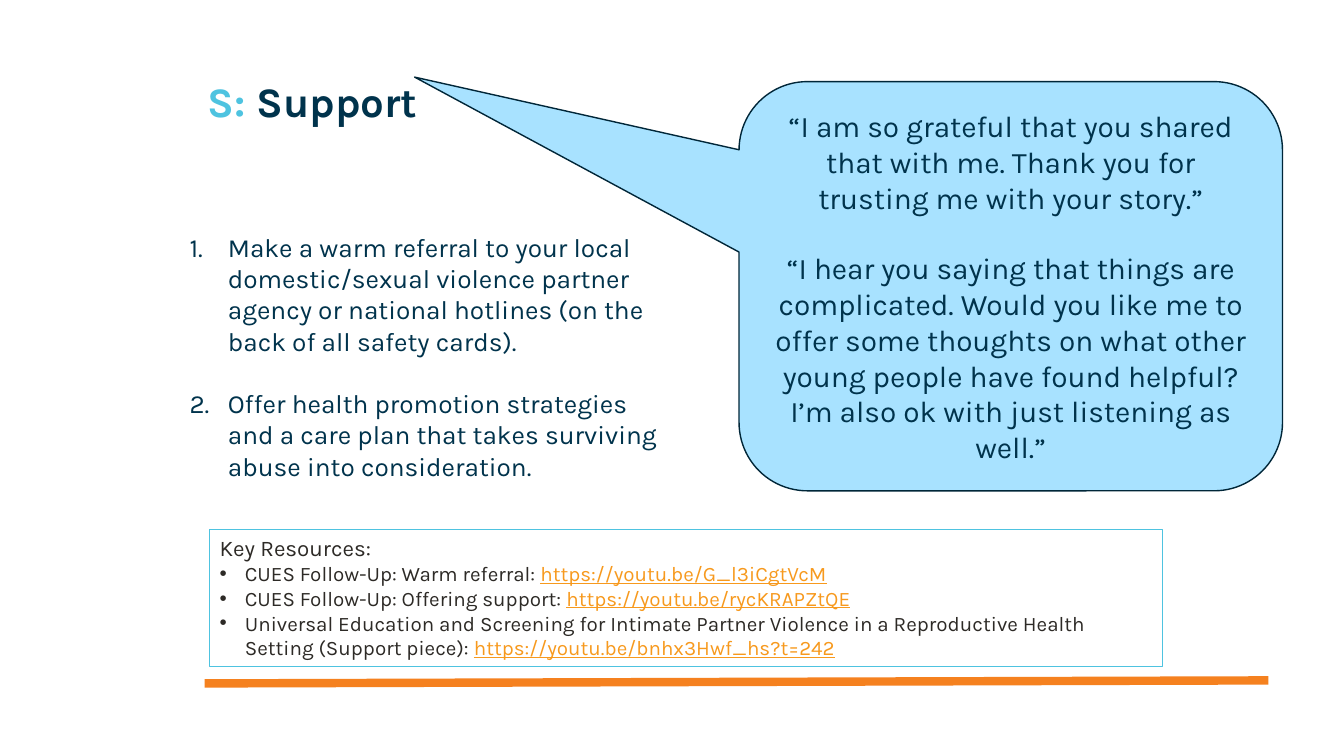
"""Build the Support slide with its steps, spoken examples and key resources."""
from dataclasses import dataclass

from lxml import etree
from pptx import Presentation
from pptx.dml.color import RGBColor
from pptx.enum.shapes import MSO_CONNECTOR, MSO_SHAPE
from pptx.enum.text import MSO_ANCHOR, MSO_AUTO_SIZE, PP_ALIGN
from pptx.oxml.ns import qn
from pptx.util import Inches, Pt

CALLOUT, RECT = MSO_SHAPE.ROUNDED_RECTANGULAR_CALLOUT, MSO_SHAPE.RECTANGLE
STRAIGHT = MSO_CONNECTOR.STRAIGHT
TOP, MIDDLE = MSO_ANCHOR.TOP, MSO_ANCHOR.MIDDLE
LEFT, CENTER = PP_ALIGN.LEFT, PP_ALIGN.CENTER
NO_FIT = MSO_AUTO_SIZE.NONE
FONT = "Karla"
NAVY, SKY, INK, LINK = "00334C", "4EC3E0", "2D2A26", "F7991D"


@dataclass
class Resource:
    label: str
    url: str


STEPS = [
    "Make a warm referral to your local domestic/sexual violence partner agency "
    "or national hotlines (on the back of all safety cards).",
    "Offer health promotion strategies and a care plan that takes surviving abuse "
    "into consideration.",
]
QUOTES = [
    "“I am so grateful that you shared that with me. Thank you for trusting me with "
    "your story.”",
    "“I hear you saying that things are complicated. Would you like me to offer some "
    "thoughts on what other young people have found helpful? I’m also ok with just "
    "listening as well.”",
]
RESOURCES = [
    Resource("CUES Follow-Up: Warm referral: ", "https://youtu.be/G_l3iCgtVcM"),
    Resource("CUES Follow-Up: Offering support: ", "https://youtu.be/rycKRAPZtQE"),
    Resource("Universal Education and Screening for Intimate Partner Violence in a "
             "Reproductive Health Setting (Support piece): ",
             "https://youtu.be/bnhx3Hwf_hs?t=242"),
]


def rgb(color: str) -> RGBColor:
    """Turn a hex string into a colour."""
    return RGBColor.from_string(color)


def place(sp, left: float, top: float, width: float, height: float) -> None:
    """Move and size a placeholder."""
    sp.left, sp.top = Inches(left), Inches(top)
    sp.width, sp.height = Inches(width), Inches(height)


def setup_frame(sp, anchor=TOP, inset: tuple[float, float] = (0.1, 0.05)):
    """Prepare a wrapping text frame and return it."""
    tf = sp.text_frame
    tf.word_wrap, tf.auto_size, tf.vertical_anchor = True, NO_FIT, anchor
    tf.margin_left = tf.margin_right = Inches(inset[0])
    tf.margin_top = tf.margin_bottom = Inches(inset[1])
    return tf


def add_paragraph(tf, first: bool, align=LEFT, before: float = 0, spacing: float = 1):
    """Return the first paragraph or a new one, with its spacing set."""
    p = tf.paragraphs[0] if first else tf.add_paragraph()
    p.alignment, p.line_spacing = align, spacing
    p.space_before = Pt(0 if first else before)
    return p


def set_bullet(p, tag: str, indent: float, **attrs: str) -> None:
    """Give a paragraph a hanging bullet or number."""
    pPr = p._p.get_or_add_pPr()
    pPr.set("marL", str(Inches(indent)))
    pPr.set("indent", str(-Inches(indent)))
    etree.SubElement(pPr, qn(tag), **attrs)


def add_run(p, text: str, size: float, color: str, bold: bool = False,
            underline: bool = False) -> None:
    """Add a formatted run."""
    r = p.add_run()
    r.text = text
    font = r.font
    font.name, font.size, font.bold = FONT, Pt(size), bold
    font.underline = underline
    font.color.rgb = rgb(color)


def add_box(s, kind, left: float, top: float, width: float, height: float,
            line: str, weight: float, fill: str | None = None):
    """Add an outlined shape without shadow."""
    sp = s.shapes.add_shape(kind, Inches(left), Inches(top), Inches(width), Inches(height))
    sp.shadow.inherit = False
    if fill:
        sp.fill.solid()
        sp.fill.fore_color.rgb = rgb(fill)
    else:
        sp.fill.background()
    sp.line.color.rgb, sp.line.width = rgb(line), Pt(weight)
    return sp


def add_rule(s) -> None:
    """Draw the orange footer line."""
    rule = s.shapes.add_connector(STRAIGHT, Inches(2.03), Inches(6.78),
                                  Inches(12.58), Inches(6.75))
    rule.line.color.rgb, rule.line.width = rgb("F5811F"), Pt(6)
    etree.SubElement(rule._element.spPr, qn("a:effectLst"))


def add_title(s) -> None:
    """Fill the title placeholder."""
    place(s.shapes.title, 2.06, 0.81, 9.45, 0.5)
    p = add_paragraph(setup_frame(s.shapes.title, inset=(0, 0)), True, spacing=0.9)
    add_run(p, "S: ", 30, SKY, bold=True)
    add_run(p, "Support", 30, NAVY, bold=True)


def add_steps(s) -> None:
    """Fill the body placeholder with the numbered steps."""
    body = s.placeholders[1]
    place(body, 1.78, 2.24, 4.89, 2.61)
    tf = setup_frame(body)
    for i, step in enumerate(STEPS):
        p = add_paragraph(tf, i == 0, before=22)
        set_bullet(p, "a:buFont", 0.38, typeface="+mj-lt")
        set_bullet(p, "a:buAutoNum", 0.38, type="arabicPeriod")
        add_run(p, step, 18.7, NAVY)


def add_quotes(s) -> None:
    """Draw the speech callout."""
    callout = add_box(s, CALLOUT, 7.33, 0.81, 5.39, 4.06, "002638", 1, "A8E2FF")
    for i, value in enumerate((-1.097, -0.511, 0.167)):
        callout.adjustments[i] = value
    tf = setup_frame(callout, MIDDLE)
    for i, quote in enumerate(QUOTES):
        add_run(add_paragraph(tf, i == 0, CENTER, before=25), quote, 21.3, NAVY)


def add_resources(s) -> None:
    """Draw the box of key resources."""
    tf = setup_frame(add_box(s, RECT, 2.08, 5.25, 9.45, 1.36, SKY, 0.75))
    add_run(add_paragraph(tf, True), "Key Resources:", 16, INK)
    for resource in RESOURCES:
        p = add_paragraph(tf, False)
        set_bullet(p, "a:buFont", 0.25, typeface="Arial")
        set_bullet(p, "a:buChar", 0.25, char="•")
        add_run(p, resource.label, 14.7, INK)
        add_run(p, resource.url, 14.7, LINK, underline=True)


def main() -> None:
    """Build and save the slide."""
    prs = Presentation()
    prs.slide_width, prs.slide_height = Inches(13.33), Inches(7.5)
    s = prs.slides.add_slide(prs.slide_layouts[1])
    add_rule(s)
    add_title(s)
    add_steps(s)
    add_quotes(s)
    add_resources(s)
    prs.save("out.pptx")


if __name__ == "__main__":
    main()
